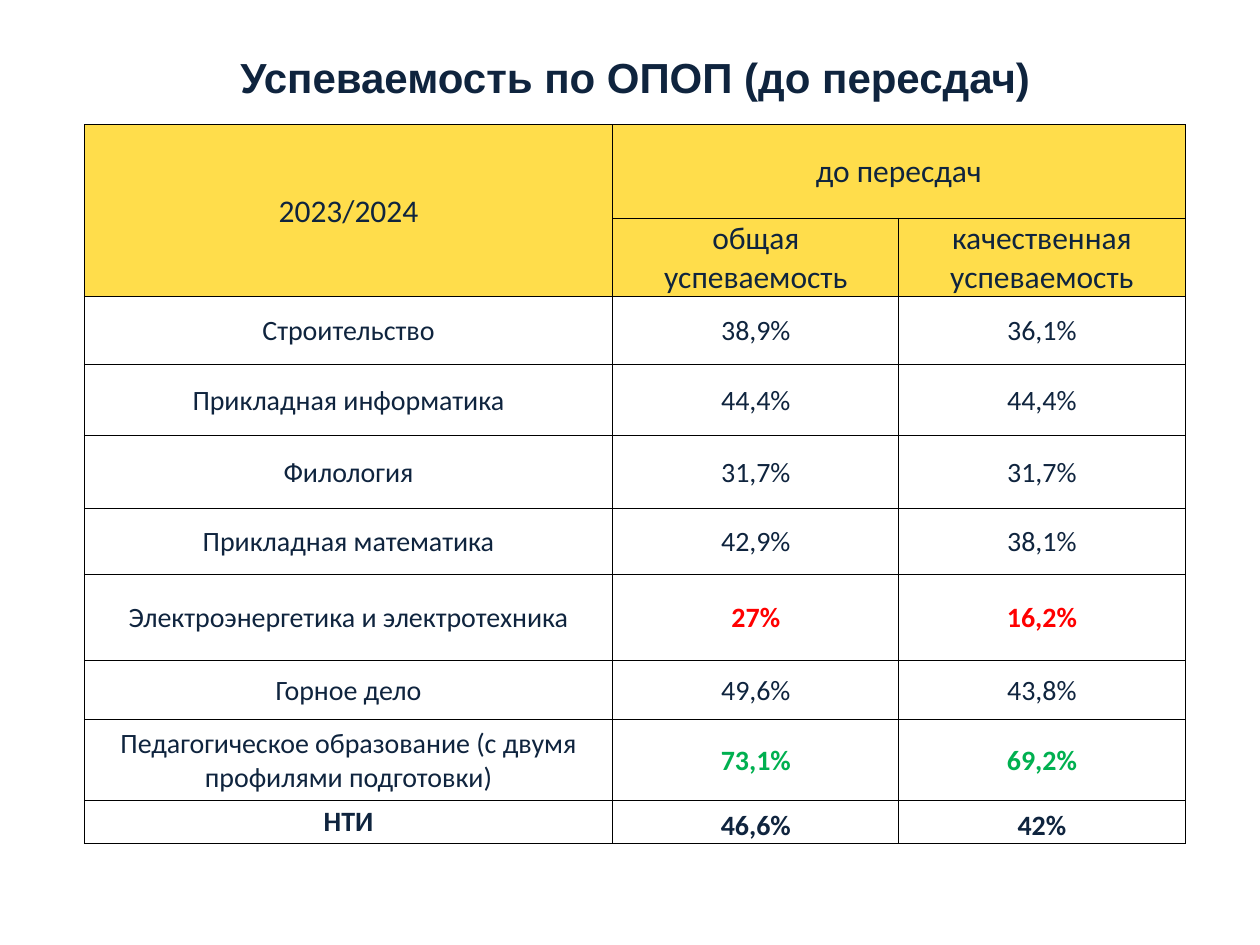
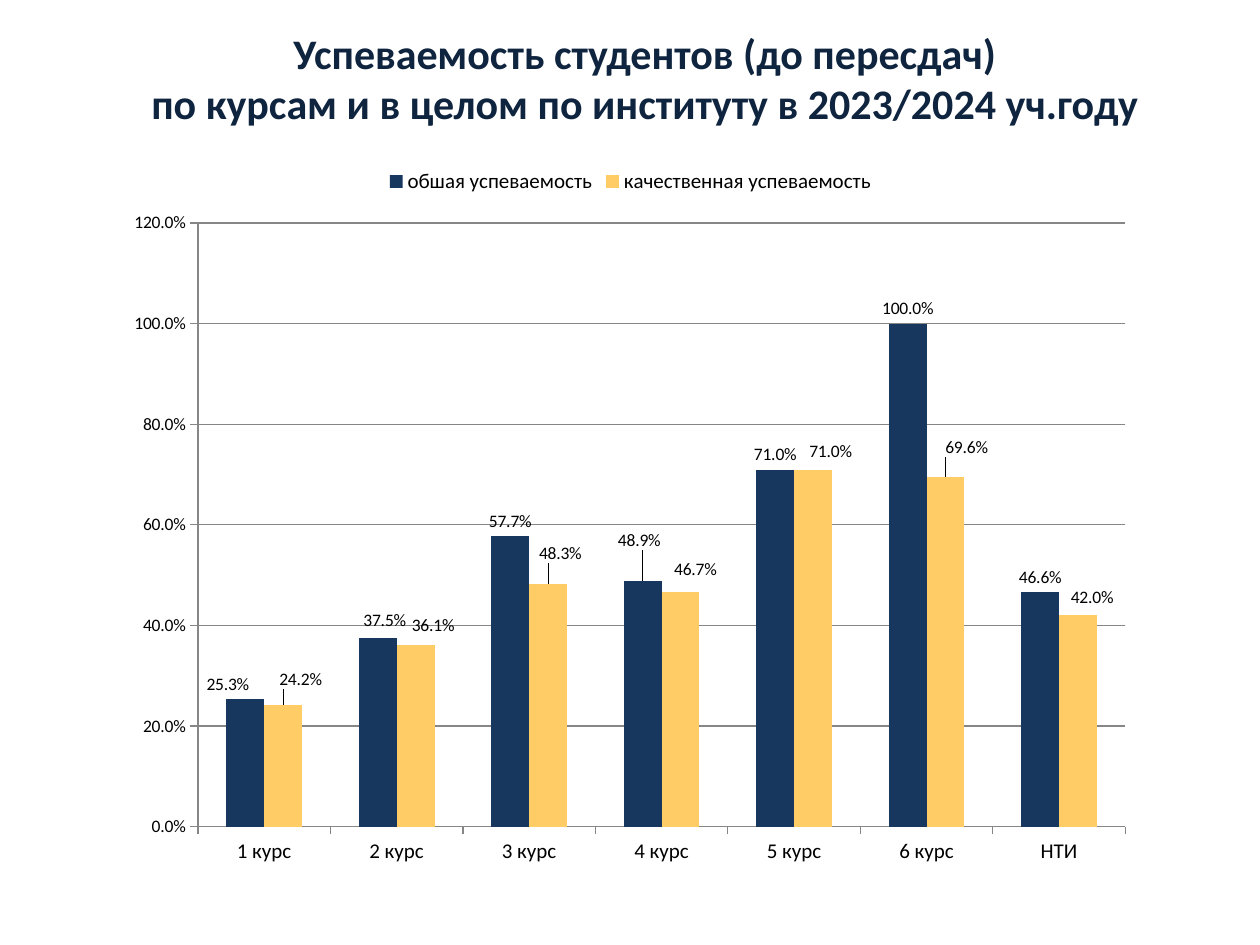
from copy import deepcopy

from lxml.etree import SubElement
from pptx import Presentation
from pptx.chart.data import CategoryChartData
from pptx.dml.color import RGBColor
from pptx.enum.chart import (XL_CHART_TYPE, XL_LABEL_POSITION, XL_LEGEND_POSITION,
                             XL_TICK_MARK)
from pptx.enum.text import MSO_ANCHOR, MSO_AUTO_SIZE, PP_ALIGN
from pptx.oxml import parse_xml
from pptx.oxml.ns import qn
from pptx.util import Pt

NAVY = RGBColor(0x0F, 0x24, 0x3E)
BAR_BLUE = RGBColor(0x17, 0x37, 0x5E)
BAR_YELLOW = RGBColor(0xFF, 0xCC, 0x66)
HEADER_YELLOW = RGBColor(0xFF, 0xDD, 0x4B)
RED = RGBColor(0xFF, 0x00, 0x00)
GREEN = RGBColor(0x00, 0xB0, 0x50)
WHITE = RGBColor(0xFF, 0xFF, 0xFF)
BLACK = RGBColor(0x00, 0x00, 0x00)
AXIS_GREY = RGBColor(0x86, 0x86, 0x86)
CHART_NS = "http://schemas.openxmlformats.org/drawingml/2006/chart"

COLUMN_WIDTHS = (302, 163.5, 163.5)
HEADER_HEIGHTS = (53.5, 41)
# programme, overall, quality, row height, colour of the results, bold results
PROGRAMMES = (
    ("Строительство", "38,9%", "36,1%", 39, NAVY, False),
    ("Прикладная информатика", "44,4%", "44,4%", 40.5, NAVY, False),
    ("Филология", "31,7%", "31,7%", 41.5, NAVY, False),
    ("Прикладная математика", "42,9%", "38,1%", 38, NAVY, False),
    ("Электроэнергетика и электротехника", "27%", "16,2%", 49, RED, True),
    ("Горное дело", "49,6%", "43,8%", 34, NAVY, False),
    ("Педагогическое образование (с двумя профилями подготовки)",
     "73,1%", "69,2%", 46, GREEN, True),
    ("НТИ", "46,6%", "42%", 24.5, NAVY, True),
)

COURSES = ("1 курс", "2 курс", "3 курс", "4 курс", "5 курс", "6 курс", "НТИ")
# name, colour, values, label shifts in points by course index
RESULTS = (
    ("обшая успеваемость", BAR_BLUE,
     (0.253, 0.375, 0.577, 0.489, 0.71, 1, 0.466),
     {0: (-10, 0), 1: (4, -1.5), 3: (-2, -14.5)}),
    ("качественная успеваемость", BAR_YELLOW,
     (0.242, 0.361, 0.483, 0.467, 0.71, 0.696, 0.42),
     {0: (10, -6), 1: (10, -3), 2: (7, -9), 3: (8.5, -4),
      4: (10, -2), 5: (12, -8), 6: (8, -2)}),
)
PLOT_BOX = (47.6, 39, 530, 345)


def style_font(font, size, color=BLACK, name="Calibri", bold=False):
    font.size, font.name, font.bold = Pt(size), name, bold
    font.color.rgb = color


def write(frame, text, anchor=MSO_ANCHOR.MIDDLE, **font_format):
    """Fill a frame with centred text, one paragraph to a line."""
    frame.text = text
    frame.word_wrap = True
    frame.vertical_anchor = anchor
    for paragraph in frame.paragraphs:
        paragraph.alignment = PP_ALIGN.CENTER
        for run in paragraph.runs:
            style_font(run.font, **font_format)


def add_titled_slide(deck, text, box, **title_format):
    slide = deck.slides.add_slide(deck.slide_layouts[5])
    title = slide.shapes.title
    title.left, title.top, title.width, title.height = map(Pt, box)
    write(title.text_frame, text, size=24, color=NAVY, bold=True, **title_format)
    title.text_frame.auto_size = MSO_AUTO_SIZE.NONE
    return slide


def add_borders(cell):
    properties = cell._tc.get_or_add_tcPr()
    for index, side in enumerate(("lnL", "lnR", "lnT", "lnB")):
        border = parse_xml(
            f'<a:{side} xmlns:a="http://schemas.openxmlformats.org/drawingml/2006/main" '
            f'w="{Pt(0.5)}"><a:solidFill><a:srgbClr val="{BLACK}"/></a:solidFill></a:{side}>')
        properties.insert(index, border)


def fill_cell(cell, text, fill=WHITE, **text_format):
    cell.margin_left = cell.margin_right = cell.margin_top = Pt(0.7)
    cell.margin_bottom = 0
    write(cell.text_frame, text, **text_format)
    cell.vertical_anchor = text_format.get("anchor", MSO_ANCHOR.MIDDLE)
    cell.fill.solid()
    cell.fill.fore_color.rgb = fill


def add_programme_table(slide, left, top):
    heights = HEADER_HEIGHTS + tuple(row[3] for row in PROGRAMMES)
    table = slide.shapes.add_table(
        len(heights), len(COLUMN_WIDTHS), Pt(left), Pt(top),
        Pt(sum(COLUMN_WIDTHS)), Pt(sum(heights))).table
    table.first_row = table.horz_banding = False
    for column, width in zip(table.columns, COLUMN_WIDTHS):
        column.width = Pt(width)
    for row, height in zip(table.rows, heights):
        row.height = Pt(height)

    table.cell(0, 0).merge(table.cell(1, 0))
    table.cell(0, 1).merge(table.cell(0, 2))
    for row, column, text in ((0, 0, "2023/2024"), (0, 1, "до пересдач"),
                              (1, 1, "общая\nуспеваемость"),
                              (1, 2, "качественная успеваемость")):
        fill_cell(table.cell(row, column), text, HEADER_YELLOW, size=18, color=NAVY)

    for row, (programme, *results, _, color, bold) in enumerate(PROGRAMMES, 2):
        is_total = row == len(heights) - 1
        fill_cell(table.cell(row, 0), programme, size=16, color=NAVY, bold=is_total)
        for column, result in enumerate(results, 1):
            fill_cell(table.cell(row, column), result, size=16, color=color, bold=bold,
                      anchor=MSO_ANCHOR.BOTTOM if is_total else MSO_ANCHOR.MIDDLE)
    for cell in table.iter_cells():
        add_borders(cell)


def manual_layout(inner=False, **fractions):
    """Chart layout element; x, y, w and h are fractions of the chart."""
    layout = parse_xml(f'<c:layout xmlns:c="{CHART_NS}"><c:manualLayout/></c:layout>')
    settings = dict(layoutTarget="inner", xMode="edge", yMode="edge") if inner else {}
    for tag, value in {**settings, **fractions}.items():
        SubElement(layout[0], qn(f"c:{tag}")).set("val", str(value))
    return layout


def label_series(series, shifts, width, height):
    labels = series.data_labels
    labels.show_value = True
    labels.number_format, labels.number_format_is_linked = "0.0%", False
    labels.position = XL_LABEL_POSITION.OUTSIDE_END
    style_font(labels.font, 10)
    shared = [part for part in labels._element if part.tag != qn("c:showLeaderLines")]
    for order, (index, (dx, dy)) in enumerate(shifts.items()):
        label = parse_xml(f'<c:dLbl xmlns:c="{CHART_NS}"><c:idx val="{index}"/></c:dLbl>')
        label.append(manual_layout(x=dx / width, y=dy / height))
        label.extend(deepcopy(part) for part in shared)
        labels._element.insert(order, label)


def style_axis(axis, size):
    axis.major_tick_mark = XL_TICK_MARK.OUTSIDE
    axis.minor_tick_mark = XL_TICK_MARK.NONE
    style_font(axis.tick_labels.font, size)
    axis.format.line.color.rgb = AXIS_GREY
    axis.format.line.width = Pt(0.75)


def add_course_chart(slide, left, top, width, height):
    data = CategoryChartData(number_format="0.0%")
    data.categories = COURSES
    for name, _, values, _ in RESULTS:
        data.add_series(name, values)
    chart = slide.shapes.add_chart(XL_CHART_TYPE.COLUMN_CLUSTERED, Pt(left), Pt(top),
                                   Pt(width), Pt(height), data).chart
    style_font(chart.font, 10)
    chart.has_title = False
    chart.has_legend = True
    chart.legend.position = XL_LEGEND_POSITION.TOP
    chart.legend.include_in_layout = False
    style_font(chart.legend.font, 12)

    style_axis(chart.category_axis, 12)
    style_axis(chart.value_axis, 10)
    chart.value_axis.minimum_scale, chart.value_axis.maximum_scale = 0, 1.2
    chart.value_axis.major_unit = 0.2
    chart.value_axis.tick_labels.number_format = "0.0%"
    chart.value_axis.tick_labels.number_format_is_linked = False
    gridline = chart.value_axis.major_gridlines.format.line
    gridline.color.rgb, gridline.width = AXIS_GREY, Pt(0.75)

    plot = chart.plots[0]
    plot.gap_width, plot.overlap, plot.vary_by_categories = 150, 0, False
    for series, (_, color, _, shifts) in zip(plot.series, RESULTS):
        series.format.fill.solid()
        series.format.fill.fore_color.rgb = color
        label_series(series, shifts, width, height)

    plot_area = chart._chartSpace.chart.plotArea
    for automatic in plot_area.findall(qn("c:layout")):
        plot_area.remove(automatic)
    x, y, w, h = PLOT_BOX
    plot_area.insert(0, manual_layout(inner=True, x=x / width, y=y / height,
                                      w=w / width, h=h / height))


def main():
    deck = Presentation()
    deck.slide_width, deck.slide_height = Pt(720), Pt(540)

    by_programme = add_titled_slide(deck, "Успеваемость по ОПОП (до пересдач)",
                                    (20, 26, 686, 37), name="Arial",
                                    anchor=MSO_ANCHOR.TOP)
    add_programme_table(by_programme, 48.2, 71.3)

    by_course = add_titled_slide(
        deck, "Успеваемость студентов (до пересдач)\n"
              "по курсам и в целом по институту в 2023/2024 уч.году",
        (54, 11.5, 629, 65.5))
    add_course_chart(by_course, 65.5, 88.5, 589.7, 414)

    deck.save("out.pptx")


if __name__ == "__main__":
    main()
